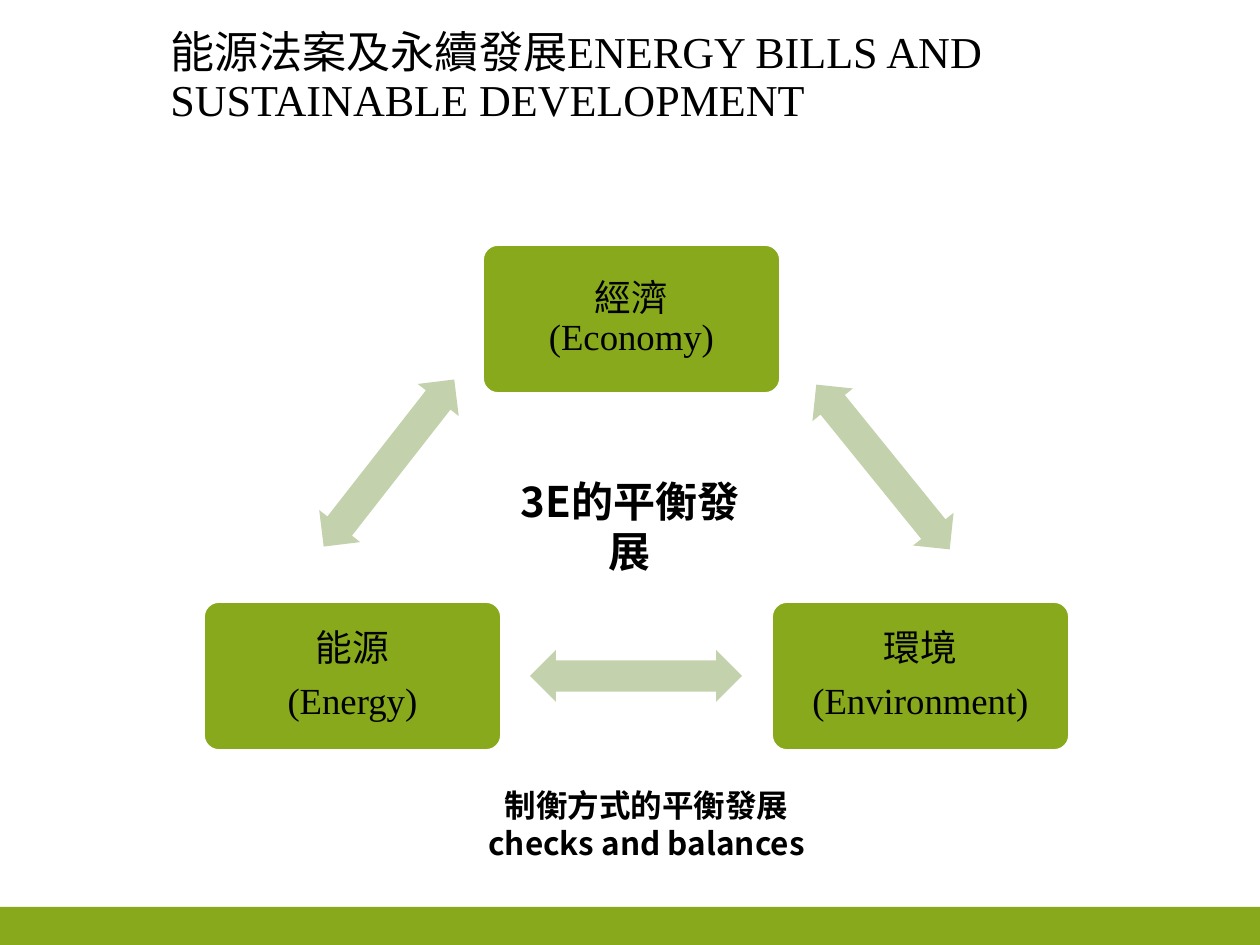
from dataclasses import dataclass

import pptx
import pptx.dml.color
import pptx.enum.shapes
import pptx.enum.text
import pptx.util

RGBColor = pptx.dml.color.RGBColor
Shape = pptx.enum.shapes.MSO_SHAPE
Anchor = pptx.enum.text.MSO_ANCHOR
Align = pptx.enum.text.PP_ALIGN

GREEN = RGBColor(0x87, 0xA9, 0x1B)
PALE_GREEN = RGBColor(0xC3, 0xD1, 0xAC)
WHITE = RGBColor(0xFF, 0xFF, 0xFF)
BLACK = RGBColor(0x00, 0x00, 0x00)
SERIF = "Times New Roman"
SANS = "Noto Sans CJK SC"

EMU_PER_PX = 914400 / 126
PAGE_WIDTH, PAGE_HEIGHT = 1260, 945
FOOTER_HEIGHT = 38
PILLAR_WIDTH, PILLAR_HEIGHT, PILLAR_INSET = 297, 148, 16
ARROW_WIDTH, ARROW_HEIGHT = 212, 52


@dataclass(frozen=True)
class Style:
    font: str
    size: float
    bold: bool = False
    align: Align = Align.CENTER
    line_spacing: float = 1.0
    space_after: float = 0


@dataclass(frozen=True)
class Pillar:
    left: int
    top: int
    paragraphs: tuple[str, ...]


@dataclass(frozen=True)
class Arrow:
    left: int
    top: int
    rotation: int


@dataclass(frozen=True)
class Label:
    left: int
    top: int
    width: int
    height: int
    paragraphs: tuple[str, ...]
    style: Style
    anchor: Anchor = Anchor.TOP


PILLAR_STYLE = Style(SERIF, 21, line_spacing=0.9, space_after=7.35)

PILLARS = (
    Pillar(483, 245, ("經濟\n(Economy)",)),
    Pillar(772, 602, ("環境", "(Environment)")),
    Pillar(204, 602, ("能源", "(Energy)")),
)
ARROWS = (Arrow(777, 441, 51), Arrow(530, 650, 180), Arrow(283, 437, 308))
LABELS = (
    Label(158, 50, 945, 82,
          ("能源法案及永續發展ENERGY BILLS AND SUSTAINABLE DEVELOPMENT",),
          Style(SERIF, 25.2, align=Align.LEFT, line_spacing=0.9), Anchor.BOTTOM),
    Label(490, 469, 280, 63, ("3E的平衡發展",), Style(SANS, 24, bold=True)),
    Label(472, 780, 349, 90, ("制衡方式的平衡發展", "checks and balances"),
          Style(SANS, 18, bold=True)),
)


def px(length: int) -> pptx.util.Emu:
    return pptx.util.Emu(round(length * EMU_PER_PX))


def write(frame, paragraphs: tuple[str, ...], style: Style, anchor: Anchor) -> None:
    """Fill a text frame; a newline inside a paragraph becomes a line break."""
    frame.word_wrap = True
    frame.vertical_anchor = anchor
    for index, text in enumerate(paragraphs):
        para = frame.add_paragraph() if index else frame.paragraphs[0]
        para.alignment = style.align
        para.line_spacing = style.line_spacing
        para.space_after = pptx.util.Pt(style.space_after)
        for number, line in enumerate(text.split("\n")):
            if number:
                para.add_line_break()
            span = para.add_run()
            span.text = line
            span.font.name = style.font
            span.font.size = pptx.util.Pt(style.size)
            span.font.bold = style.bold
            span.font.color.rgb = BLACK


def add_filled(page, kind: Shape, left: int, top: int, width: int, height: int,
               color: RGBColor):
    """Add a flat shape without outline or shadow."""
    shape = page.shapes.add_shape(kind, px(left), px(top), px(width), px(height))
    shape.shadow.inherit = False
    shape.fill.solid()
    shape.fill.fore_color.rgb = color
    shape.line.fill.background()
    return shape


def add_pillar(page, pillar: Pillar) -> None:
    box = add_filled(page, Shape.ROUNDED_RECTANGLE, pillar.left, pillar.top,
                     PILLAR_WIDTH, PILLAR_HEIGHT, GREEN)
    box.adjustments[0] = 0.1
    box.line.color.rgb = WHITE
    box.line.width = pptx.util.Pt(1)
    frame = box.text_frame
    frame.margin_left = frame.margin_right = px(PILLAR_INSET)
    frame.margin_top = frame.margin_bottom = px(PILLAR_INSET)
    write(frame, pillar.paragraphs, PILLAR_STYLE, Anchor.MIDDLE)


def add_arrow(page, arrow: Arrow) -> None:
    shape = add_filled(page, Shape.LEFT_RIGHT_ARROW, arrow.left, arrow.top,
                       ARROW_WIDTH, ARROW_HEIGHT, PALE_GREEN)
    shape.adjustments[0] = 0.6
    shape.adjustments[1] = 0.5
    shape.rotation = arrow.rotation


def add_label(page, label: Label) -> None:
    box = page.shapes.add_textbox(px(label.left), px(label.top),
                                  px(label.width), px(label.height))
    write(box.text_frame, label.paragraphs, label.style, label.anchor)


def main() -> None:
    deck = pptx.Presentation()
    deck.slide_width, deck.slide_height = px(PAGE_WIDTH), px(PAGE_HEIGHT)
    page = deck.slides.add_slide(deck.slide_layouts[6])
    add_filled(page, Shape.RECTANGLE, 0, PAGE_HEIGHT - FOOTER_HEIGHT,
               PAGE_WIDTH, FOOTER_HEIGHT, GREEN)
    for pillar in PILLARS:
        add_pillar(page, pillar)
    for arrow in ARROWS:
        add_arrow(page, arrow)
    for label in LABELS:
        add_label(page, label)
    deck.save("out.pptx")


if __name__ == "__main__":
    main()
